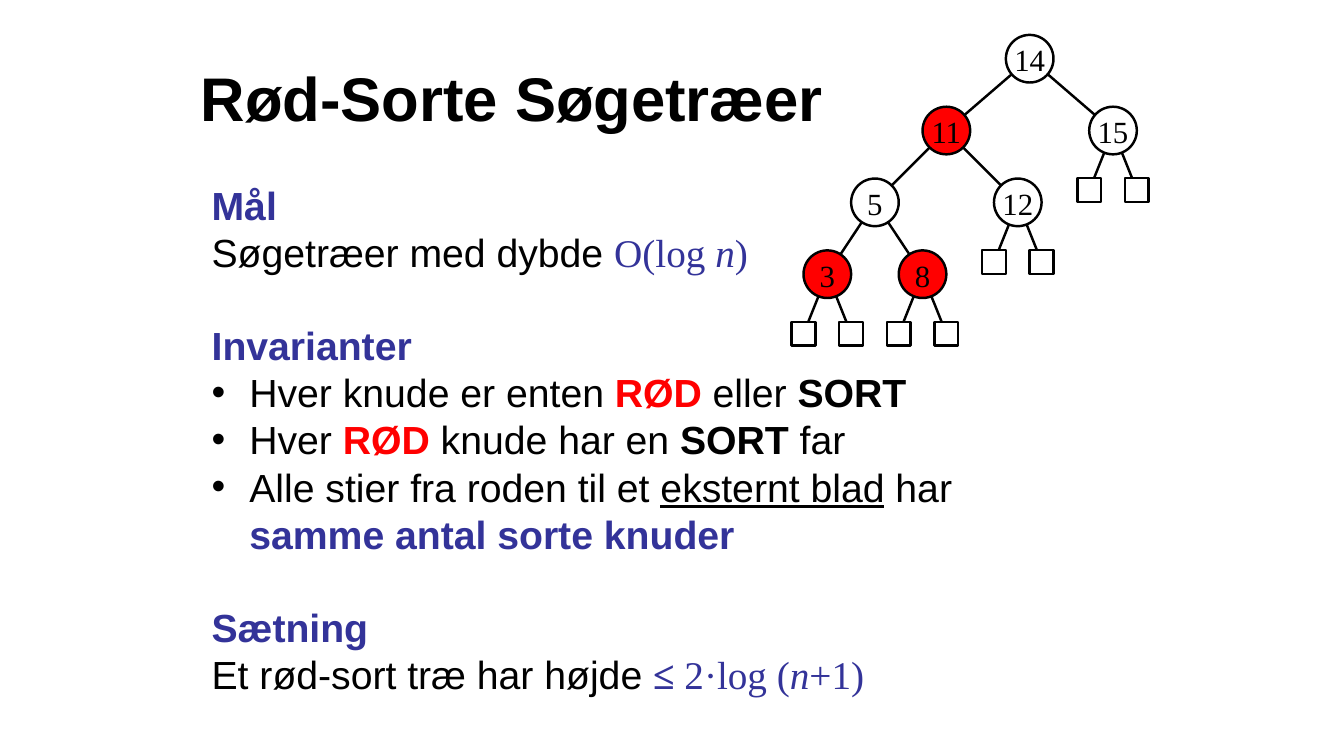
"""Build a slide on red-black search trees with invariants and an example tree."""
from dataclasses import dataclass

from lxml.etree import SubElement
from pptx import Presentation
from pptx.dml.color import RGBColor
from pptx.enum.shapes import MSO_CONNECTOR, MSO_SHAPE
from pptx.enum.text import MSO_ANCHOR, MSO_AUTO_SIZE, PP_ALIGN
from pptx.oxml.ns import qn
from pptx.util import Cm, Pt

TITLE = "Rød-Sorte Søgetræer"

BODY = [
    ("head", [("Mål", "head")]),
    ("plain", [("Søgetræer med dybde ", "text"), ("O(log ", "math"),
               ("n", "var"), (")", "math")]),
    ("section", [("Invarianter", "head")]),
    ("bullet", [("Hver knude er enten ", "text"), ("RØD", "red"),
                (" eller ", "text"), ("SORT", "strong")]),
    ("bullet", [("Hver ", "text"), ("RØD", "red"), (" knude har en ", "text"),
                ("SORT ", "strong"), ("far", "text")]),
    ("bullet", [("Alle stier fra roden til et ", "text"),
                ("eksternt blad", "under"), (" har", "text")]),
    ("hanging", [("samme antal sorte knuder", "head")]),
    ("section", [("Sætning", "head")]),
    ("plain", [("Et rød-sort træ har højde ", "text"), ("≤ ", "mathbold"),
               ("2·log (", "math"), ("n", "var"), ("+1)", "math")]),
]

TREE = ("14", "white", 3.5,
        ("11", "red", 3,
         ("5", "white", 2, ("3", "red", 1, None, None), ("8", "red", 1, None, None)),
         ("12", "white", 1, None, None)),
        ("15", "white", 1, None, None))


@dataclass(frozen=True)
class Theme:
    sans: str = "Arial"
    serif: str = "Times New Roman"
    black: RGBColor = RGBColor(0, 0, 0)
    white: RGBColor = RGBColor(255, 255, 255)
    red: RGBColor = RGBColor(255, 0, 0)
    blue: RGBColor = RGBColor(0x33, 0x33, 0x99)
    title: Pt = Pt(44)
    body: Pt = Pt(28)
    node: Pt = Pt(22)
    line: Pt = Pt(1.75)
    gap: Pt = Pt(6.9)
    section_gap: Pt = Pt(39.5)


T = Theme()
STYLES = {
    "text": (T.sans, T.black, {"bold": False}),
    "strong": (T.sans, T.black, {"bold": True}),
    "under": (T.sans, T.black, {"bold": False, "underline": True}),
    "red": (T.sans, T.red, {"bold": True}),
    "head": (T.sans, T.blue, {"bold": True}),
    "math": (T.serif, T.blue, {"bold": False}),
    "mathbold": (T.serif, T.blue, {"bold": True}),
    "var": (T.serif, T.blue, {"bold": False, "italic": True}),
}
INDENT = Cm(0.95)
UNIT, LEVEL, LEAF_DROP = 0.6, 1.81, 1.5
NODE_SIZE, LEAF_SIZE = 1.2, 0.6
ROOT = (25.95, 1.48)


def format_run(r, style, size):
    name, color, flags = STYLES[style]
    r.font.name, r.font.size = name, size
    r.font.color.rgb = color
    for flag, value in flags.items():
        setattr(r.font, flag, value)


def place(sp, left, top, width, height):
    sp.left, sp.top, sp.width, sp.height = map(Cm, (left, top, width, height))
    sp.text_frame.auto_size = MSO_AUTO_SIZE.NONE
    return sp.text_frame


def add_title(s):
    tf = place(s.shapes.title, 4.23, 0.85, 17.36, 3.18)
    tf.text = TITLE
    tf.vertical_anchor = MSO_ANCHOR.MIDDLE
    p = tf.paragraphs[0]
    p.alignment = PP_ALIGN.CENTER
    format_run(p.runs[0], "strong", T.title)


def add_body(s):
    tf = place(s.placeholders[1], 5.08, 4.66, 19.47, 13.12)
    for i, (kind, parts) in enumerate(BODY):
        p = tf.add_paragraph() if i else tf.paragraphs[0]
        p.line_spacing = 0.8
        p.space_before = T.section_gap if kind == "section" else T.gap
        pPr = p._p.get_or_add_pPr()
        pPr.set("marL", str(INDENT))
        pPr.set("indent", str(0 if kind == "hanging" else -INDENT))
        if kind == "bullet":
            SubElement(pPr, qn("a:buFont")).set("typeface", T.sans)
            SubElement(pPr, qn("a:buChar")).set("char", "•")
        else:
            SubElement(pPr, qn("a:buNone"))
        for text, style in parts:
            r = p.add_run()
            r.text = text
            format_run(r, style, T.body)


def layout_tree(node, x, y, marks, edges):
    marks.append((node, x, y))
    if node is None:
        return
    spread, *children = node[2:]
    for side, child in zip((-1, 1), children):
        cx = x + side * spread * UNIT
        cy = y + (LEVEL if child else LEAF_DROP)
        edges.append((x, y, cx, cy))
        layout_tree(child, cx, cy, marks, edges)


def add_mark(group, node, x, y):
    kind, size = (MSO_SHAPE.OVAL, NODE_SIZE) if node else (MSO_SHAPE.RECTANGLE, LEAF_SIZE)
    sp = group.shapes.add_shape(kind, Cm(x - size / 2), Cm(y - size / 2), Cm(size), Cm(size))
    sp.shadow.inherit = False
    sp.fill.solid()
    sp.fill.fore_color.rgb = T.red if node and node[1] == "red" else T.white
    sp.line.color.rgb, sp.line.width = T.black, T.line
    if node:
        tf = sp.text_frame
        tf.text = node[0]
        tf.word_wrap = False
        tf.margin_left = tf.margin_right = tf.margin_bottom = 0
        tf.margin_top = Cm(0.04)
        tf.vertical_anchor = MSO_ANCHOR.MIDDLE
        p = tf.paragraphs[0]
        p.alignment = PP_ALIGN.CENTER
        font = p.runs[0].font
        font.name, font.size = T.serif, T.node
        font.color.rgb = T.black


def add_tree(s):
    marks, edges = [], []
    layout_tree(TREE, *ROOT, marks, edges)
    group = s.shapes.add_group_shape()
    for edge in edges:
        line = group.shapes.add_connector(MSO_CONNECTOR.STRAIGHT, *map(Cm, edge))
        line.line.color.rgb, line.line.width = T.black, T.line
        SubElement(line._element.spPr, qn("a:effectLst"))
    for mark in marks:
        add_mark(group, *mark)


def main():
    prs = Presentation()
    prs.slide_width, prs.slide_height = Cm(33.87), Cm(19.05)
    s = prs.slides.add_slide(prs.slide_layouts[1])
    add_title(s)
    add_body(s)
    add_tree(s)
    prs.save("out.pptx")


if __name__ == "__main__":
    main()
